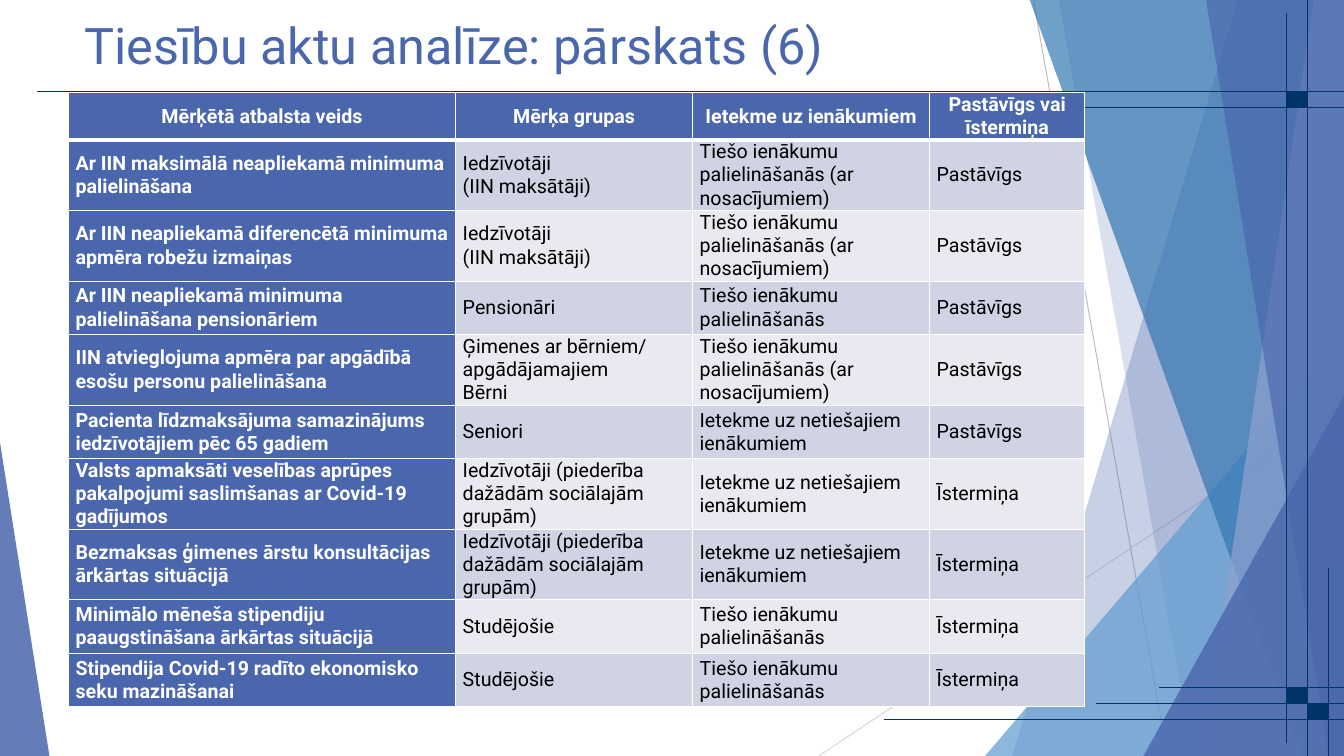
from lxml import etree
from pptx import Presentation
from pptx import util as u
from pptx.dml.color import RGBColor
from pptx.enum import shapes, text
from pptx.oxml import ns

BLUE = RGBColor(0x4A, 0x66, 0xAC)
SKY = RGBColor(0x62, 0x9D, 0xD1)
OCEAN = RGBColor(0x34, 0x77, 0xB2)
LAVENDER = RGBColor(0x90, 0xA2, 0xCF)
NAVY = RGBColor(0x00, 0x33, 0x66)
GREY = RGBColor(0xBF, 0xBF, 0xBF)
LIGHT_GREY = RGBColor(0xD9, 0xD9, 0xD9)
BAND_DARK = RGBColor(0xD0, 0xD3, 0xE3)
BAND_LIGHT = RGBColor(0xE9, 0xEA, 0xF1)
WHITE = RGBColor(0xFF, 0xFF, 0xFF)
BLACK = RGBColor(0x00, 0x00, 0x00)

WIDTH, HEIGHT = 13.33, 7.5
TOP = -0.01

DIRECT_TWO_LINES = "Tiešo ienākumu palielināšanās"
DIRECT_CONDITIONAL = DIRECT_TWO_LINES + " (ar nosacījumiem)"
INDIRECT = "Ietekme uz netiešajiem ienākumiem"
TAXPAYERS = "Iedzīvotāji\n(IIN maksātāji)"
SOCIAL_GROUPS = "Iedzīvotāji (piederība dažādām sociālajām grupām)"
LASTING, SHORT_TERM = "Pastāvīgs", "Īstermiņa"

SUPPORT_ROWS = [
    ("Mērķētā atbalsta veids", "Mērķa grupas", "Ietekme uz ienākumiem",
     "Pastāvīgs vai īstermiņa"),
    ("Ar IIN maksimālā neapliekamā minimuma palielināšana",
     TAXPAYERS, DIRECT_CONDITIONAL, LASTING),
    ("Ar IIN neapliekamā diferencētā minimuma apmēra robežu izmaiņas",
     TAXPAYERS, DIRECT_CONDITIONAL, LASTING),
    ("Ar IIN neapliekamā minimuma palielināšana pensionāriem",
     "Pensionāri", DIRECT_TWO_LINES, LASTING),
    ("IIN atvieglojuma apmēra par apgādībā esošu personu palielināšana",
     "Ģimenes ar bērniem/ apgādājamajiem\nBērni", DIRECT_CONDITIONAL, LASTING),
    ("Pacienta līdzmaksājuma samazinājums iedzīvotājiem pēc 65 gadiem",
     "Seniori", INDIRECT, LASTING),
    ("Valsts apmaksāti veselības aprūpes pakalpojumi saslimšanas ar Covid-19 gadījumos",
     SOCIAL_GROUPS, INDIRECT, SHORT_TERM),
    ("Bezmaksas ģimenes ārstu konsultācijas ārkārtas situācijā",
     SOCIAL_GROUPS, INDIRECT, SHORT_TERM),
    ("Minimālo mēneša stipendiju paaugstināšana ārkārtas situācijā",
     "Studējošie", DIRECT_TWO_LINES, SHORT_TERM),
    ("Stipendija Covid-19 radīto ekonomisko seku mazināšanai",
     "Studējošie", DIRECT_TWO_LINES, SHORT_TERM),
]
COLUMN_WIDTHS = [3.84, 2.35, 2.35, 1.54]
ROW_HEIGHTS = [0.45, 0.7, 0.7, 0.53, 0.7, 0.53, 0.7, 0.7, 0.53, 0.53]


class SlidePainter:
    font_name = "Roboto"

    def __init__(self, page):
        self.page = page

    def style_font(self, para, size, color, bold=False):
        para.font.name = self.font_name
        para.font.size = u.Pt(size)
        para.font.bold = bold
        para.font.color.rgb = color

    def line(self, x1, y1, x2, y2, color=NAVY):
        connector = self.page.shapes.add_connector(
            shapes.MSO_CONNECTOR.STRAIGHT,
            u.Inches(x1), u.Inches(y1), u.Inches(x2), u.Inches(y2))
        connector.line.color.rgb = color
        connector.line.width = u.Pt(0.75)
        etree.SubElement(connector._element.spPr, ns.qn("a:effectLst"))

    def fill(self, shape, color, opacity):
        shape.shadow.inherit = False
        shape.fill.solid()
        shape.fill.fore_color.rgb = color
        shape.line.fill.background()
        color_node = shape._element.spPr.find(ns.qn("a:solidFill"))[0]
        etree.SubElement(color_node, ns.qn("a:alpha"), val=str(opacity * 1000))

    def polygon(self, points, color, opacity):
        corners = [(u.Inches(x), u.Inches(y)) for x, y in points]
        builder = self.page.shapes.build_freeform(*corners[0])
        builder.add_line_segments(corners[1:], close=True)
        self.fill(builder.convert_to_shape(), color, opacity)

    def triangle(self, left, top, width, height, apex, color, opacity):
        shape = self.page.shapes.add_shape(
            shapes.MSO_SHAPE.ISOSCELES_TRIANGLE,
            u.Inches(left), u.Inches(top), u.Inches(width), u.Inches(height))
        shape.adjustments[0] = apex
        self.fill(shape, color, opacity)

    def square(self, left, top):
        shape = self.page.shapes.add_shape(
            shapes.MSO_SHAPE.RECTANGLE,
            u.Inches(left), u.Inches(top), u.Inches(0.21), u.Inches(0.16))
        shape.shadow.inherit = False
        shape.fill.solid()
        shape.fill.fore_color.rgb = NAVY
        shape.line.color.rgb = NAVY
        shape.line.width = u.Pt(0.75)

    def title(self, words, left, top, width, height):
        box = self.page.shapes.add_textbox(
            u.Inches(left), u.Inches(top), u.Inches(width), u.Inches(height))
        frame = box.text_frame
        frame.word_wrap = True
        frame.vertical_anchor = text.MSO_ANCHOR.MIDDLE
        frame.text = words
        para = frame.paragraphs[0]
        para.line_spacing = 0.9
        self.style_font(para, 36, BLUE)

    def cell(self, cell, words, background, color, bold, align, bottom_width):
        cell.text = words
        cell.vertical_anchor = text.MSO_ANCHOR.MIDDLE
        cell.margin_left = cell.margin_right = u.Inches(0.07)
        cell.margin_top = cell.margin_bottom = 0
        for para in cell.text_frame.paragraphs:
            para.alignment = align
            self.style_font(para, 14, color, bold)
        # Borders come before the fill in the cell properties
        properties = cell._tc.get_or_add_tcPr()
        for side in ("lnL", "lnR", "lnT", "lnB"):
            points = bottom_width if side == "lnB" else 1
            border = etree.SubElement(properties, ns.qn("a:" + side), w=str(u.Pt(points)))
            paint = etree.SubElement(border, ns.qn("a:solidFill"))
            etree.SubElement(paint, ns.qn("a:srgbClr"), val=str(WHITE))
        cell.fill.solid()
        cell.fill.fore_color.rgb = background

    def table(self, rows, left, top, widths, heights):
        table = self.page.shapes.add_table(
            len(rows), len(widths), u.Inches(left), u.Inches(top),
            u.Inches(sum(widths)), u.Inches(sum(heights))).table
        table.horz_banding = False
        for column, width in zip(table.columns, widths):
            column.width = u.Inches(width)
        for r, (row, height) in enumerate(zip(rows, heights)):
            table.rows[r].height = u.Inches(height)
            for c, words in enumerate(row):
                heading = r == 0 or c == 0
                band = BAND_DARK if r % 2 else BAND_LIGHT
                self.cell(
                    table.cell(r, c), words,
                    background=BLUE if heading else band,
                    color=WHITE if heading else BLACK,
                    bold=heading,
                    align=text.PP_ALIGN.LEFT if r else text.PP_ALIGN.CENTER,
                    bottom_width=1 if r else 3)


def main():
    deck = Presentation()
    deck.slide_width, deck.slide_height = u.Inches(WIDTH), u.Inches(HEIGHT)
    painter = SlidePainter(deck.slides.add_slide(deck.slide_layouts[6]))

    # Translucent facets; each polygon runs to the right edge of the slide
    painter.line(10.25, 0, 11.58, HEIGHT, GREY)
    painter.line(WIDTH, 4.03, 8.12, HEIGHT, LIGHT_GREY)

    def facet(top_x, bottom_x, color, opacity):
        painter.polygon([(top_x, TOP), (WIDTH, TOP), (WIDTH, HEIGHT), (bottom_x, HEIGHT)],
                        color, opacity)

    facet(12.28, 10.04, BLUE, 30)
    facet(10.5, 11.83, BLUE, 20)
    painter.triangle(9.77, 3.33, 3.56, 4.17, 1, SKY, 72)
    facet(10.21, 12.91, OCEAN, 70)
    facet(13.03, 11.92, LAVENDER, 70)
    facet(11.96, 13.18, BLUE, 65)
    painter.triangle(11.34, 3.93, 1.99, 3.57, 1, BLUE, 80)
    painter.triangle(0, 4.39, 0.49, 3.11, 0, BLUE, 85)

    # Navy grid lines and their squares
    for start, y in [(0.37, 0.91), (0.79, 1.07), (10.87, 6.98), (11.5, 6.82), (8.77, 7.14)]:
        painter.line(start, y, WIDTH, y)
    for x, start, end in [(12.97, 0, HEIGHT), (12.76, 0.13, 7.37), (13.18, 5.64, HEIGHT)]:
        painter.line(x, start, x, end)
    for left, top in [(12.76, 0.91), (12.76, 6.82), (12.97, 6.98)]:
        painter.square(left, top)

    # Title and table of support measures
    painter.title("Tiesību aktu analīze: pārskats (6)", 0.74, 0.04, 9.4, 0.87)
    painter.table(SUPPORT_ROWS, 0.68, 0.92, COLUMN_WIDTHS, ROW_HEIGHTS)

    deck.save("out.pptx")


if __name__ == "__main__":
    main()
